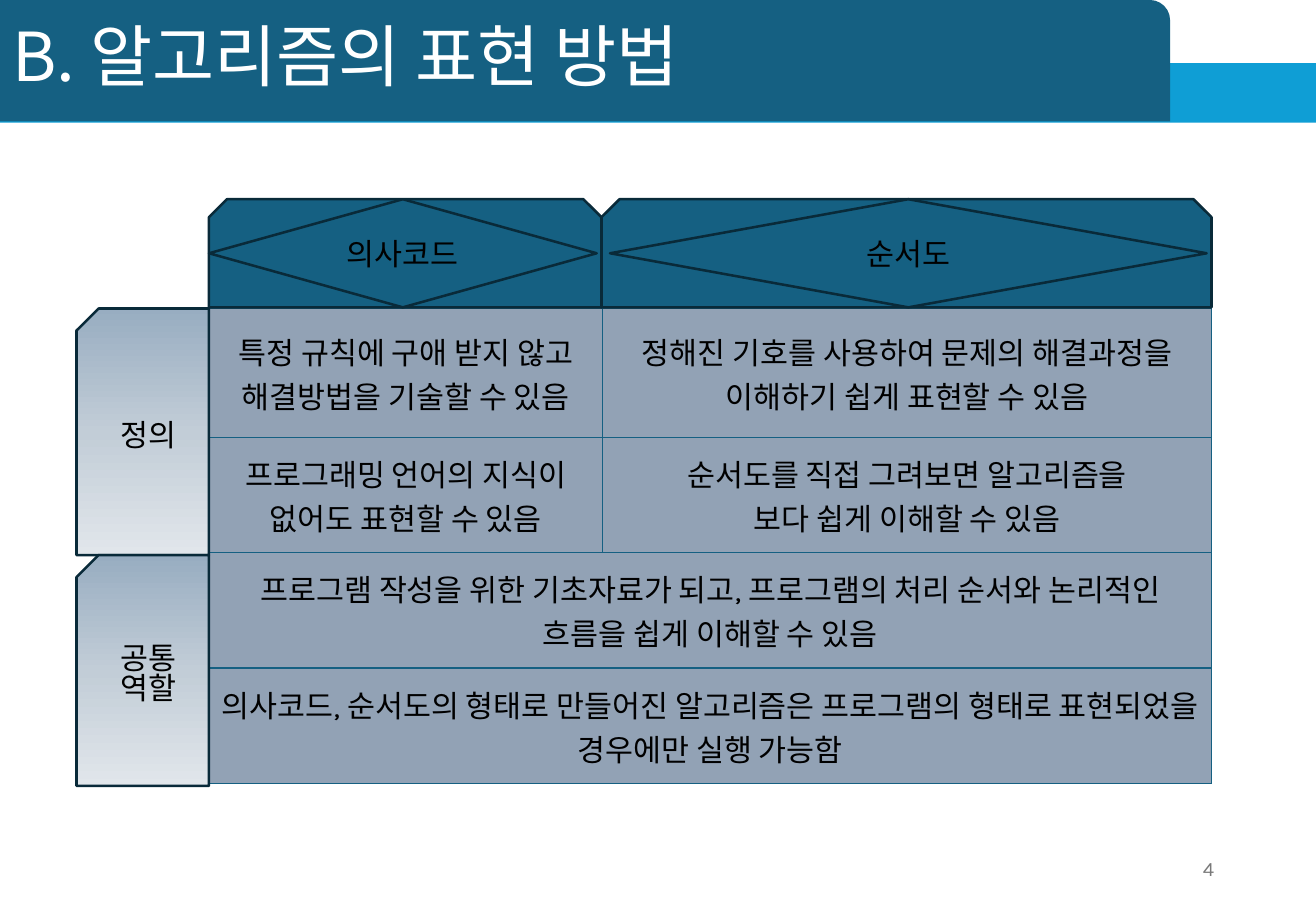
from lxml import etree
from pptx import Presentation
from pptx.dml.color import RGBColor
from pptx.enum.shapes import MSO_SHAPE
from pptx.enum.text import MSO_ANCHOR, PP_ALIGN
from pptx.oxml import parse_xml
from pptx.oxml.ns import nsdecls, qn
from pptx.util import Inches, Pt

CENTER, LEFT, RIGHT = PP_ALIGN.CENTER, PP_ALIGN.LEFT, PP_ALIGN.RIGHT
MIDDLE = MSO_ANCHOR.MIDDLE
RECTANGLE, DIAMOND = MSO_SHAPE.RECTANGLE, MSO_SHAPE.DIAMOND
ROUND_CORNER = MSO_SHAPE.ROUND_1_RECTANGLE
SNIP_ONE, SNIP_TWO = MSO_SHAPE.SNIP_1_RECTANGLE, MSO_SHAPE.SNIP_2_SAME_RECTANGLE
KOREAN, LATIN = "Noto Sans CJK KR", "Karla"
COLORS = {
    "teal": "156082", "sky": "0F9ED5", "outline": "092A39", "cell": "92A2B5",
    "black": "000000", "white": "FFFFFF", "gray": "797979",
}
LABEL_GRADIENT = {0: "98ADC1", 50: "C2CDD7", 100: "E1E6EB"}


def write_text(frame, text, size=18, font=KOREAN, color="black", align=CENTER, spacing=None):
    frame.word_wrap = True
    frame.vertical_anchor = MIDDLE
    for index, line in enumerate(text.split("\n")):
        paragraph = frame.add_paragraph() if index else frame.paragraphs[0]
        paragraph.alignment = align
        paragraph.line_spacing = spacing
        run = paragraph.add_run()
        run.text = line
        run.font.size = Pt(size)
        run.font.name = font
        run.font.color.rgb = RGBColor.from_string(COLORS[color])
        east_asian = etree.SubElement(run.font._element, qn("a:ea"))
        east_asian.set("typeface", KOREAN)


def add_block(kind, left, top, width, height, fill=None, outlined=True):
    shape = slide.shapes.add_shape(kind, Inches(left), Inches(top), Inches(width), Inches(height))
    shape.shadow.inherit = False
    if fill:
        shape.fill.solid()
        shape.fill.fore_color.rgb = RGBColor.from_string(COLORS[fill])
    if outlined:
        shape.line.color.rgb = RGBColor.from_string(COLORS["outline"])
        shape.line.width = Pt(1.5)
    else:
        shape.line.fill.background()
    return shape


presentation = Presentation()
presentation.slide_width, presentation.slide_height = Inches(10.83), Inches(7.5)
slide = presentation.slides.add_slide(presentation.slide_layouts[5])

# Header bands and title
add_block(RECTANGLE, 0, 0.52, 10.83, 0.49, "sky", outlined=False)
add_block(ROUND_CORNER, 0, 0, 9.63, 1, "teal", outlined=False)
title = slide.shapes.title
title.left, title.top, title.width, title.height = Inches(0), Inches(-0.02), Inches(10.83), Inches(1.02)
write_text(title.text_frame, "B. 알고리즘의 표현 방법", size=40, color="white", align=LEFT, spacing=0.9)
slide.shapes._spTree.append(title._element)

# Page number
page_number = slide.shapes.add_textbox(Inches(7.65), Inches(6.95), Inches(2.44), Inches(0.4))
write_text(page_number.text_frame, "4", size=12, font=LATIN, color="gray", align=RIGHT)

# Comparison table; a row with one text spans both columns
ROWS = [
    (1.06, ["특정 규칙에 구애 받지 않고 해결방법을 기술할 수 있음",
            "정해진 기호를 사용하여 문제의 해결과정을 이해하기 쉽게 표현할 수 있음"]),
    (0.95, ["프로그래밍 언어의 지식이 없어도 표현할 수 있음",
            "순서도를 직접 그려보면 알고리즘을\n보다 쉽게 이해할 수 있음"]),
    (0.95, ["프로그램 작성을 위한 기초자료가 되고, 프로그램의 처리 순서와 논리적인 흐름을 쉽게 이해할 수 있음"]),
    (0.95, ["의사코드, 순서도의 형태로 만들어진 알고리즘은 프로그램의 형태로 표현되었을 경우에만 실행 가능함"]),
]
table = slide.shapes.add_table(
    len(ROWS), 2, Inches(1.72), Inches(2.54), Inches(8.25), Inches(3.93)).table
for column, width in zip(table.columns, (3.24, 5.01)):
    column.width = Inches(width)
for row_index, (height, texts) in enumerate(ROWS):
    table.rows[row_index].height = Inches(height)
    if len(texts) == 1:
        table.cell(row_index, 0).merge(table.cell(row_index, 1))
    for column_index, text in enumerate(texts):
        cell = table.cell(row_index, column_index)
        write_text(cell.text_frame, text, font=LATIN)
    for cell in table.rows[row_index].cells:
        cell.vertical_anchor = MIDDLE
        cell.fill.solid()
        cell.fill.fore_color.rgb = RGBColor.from_string(COLORS["cell"])
        for position, side in enumerate(("lnL", "lnR", "lnT", "lnB")):
            border = parse_xml(
                f'<a:{side} {nsdecls("a")} w="12700"><a:solidFill>'
                f'<a:srgbClr val="{COLORS["teal"]}"/></a:solidFill></a:{side}>')
            cell._tc.get_or_add_tcPr().insert(position, border)

# Column headings: a diamond on a snipped block
HEADINGS = [
    ("의사코드", (1.72, 3.23), (1.72, 3.19)),
    ("순서도", (4.95, 5.02), (5.02, 4.91)),
]
for text, (block_left, block_width), (diamond_left, diamond_width) in HEADINGS:
    add_block(SNIP_TWO, block_left, 1.64, block_width, 0.89, "teal")
    diamond = add_block(DIAMOND, diamond_left, 1.64, diamond_width, 0.89, "teal")
    write_text(diamond.text_frame, text)

# Row labels: mirrored snipped blocks with a vertical gradient
stops = "".join(
    f'<a:gs pos="{position * 1000}"><a:srgbClr val="{color}"/></a:gs>'
    for position, color in LABEL_GRADIENT.items())
for text, top, height in (("정의", 2.54, 2.03), ("공통\n역할", 4.57, 1.9)):
    label = add_block(SNIP_ONE, 0.63, top, 1.09, height)
    properties = label._element.spPr
    properties.find(qn("a:xfrm")).set("flipH", "1")
    properties.find(qn("a:prstGeom")).addnext(parse_xml(
        f'<a:gradFill {nsdecls("a")}><a:gsLst>{stops}</a:gsLst>'
        '<a:lin ang="5400000" scaled="0"/></a:gradFill>'))
    write_text(label.text_frame, text, spacing=0.82)

presentation.save("out.pptx")
